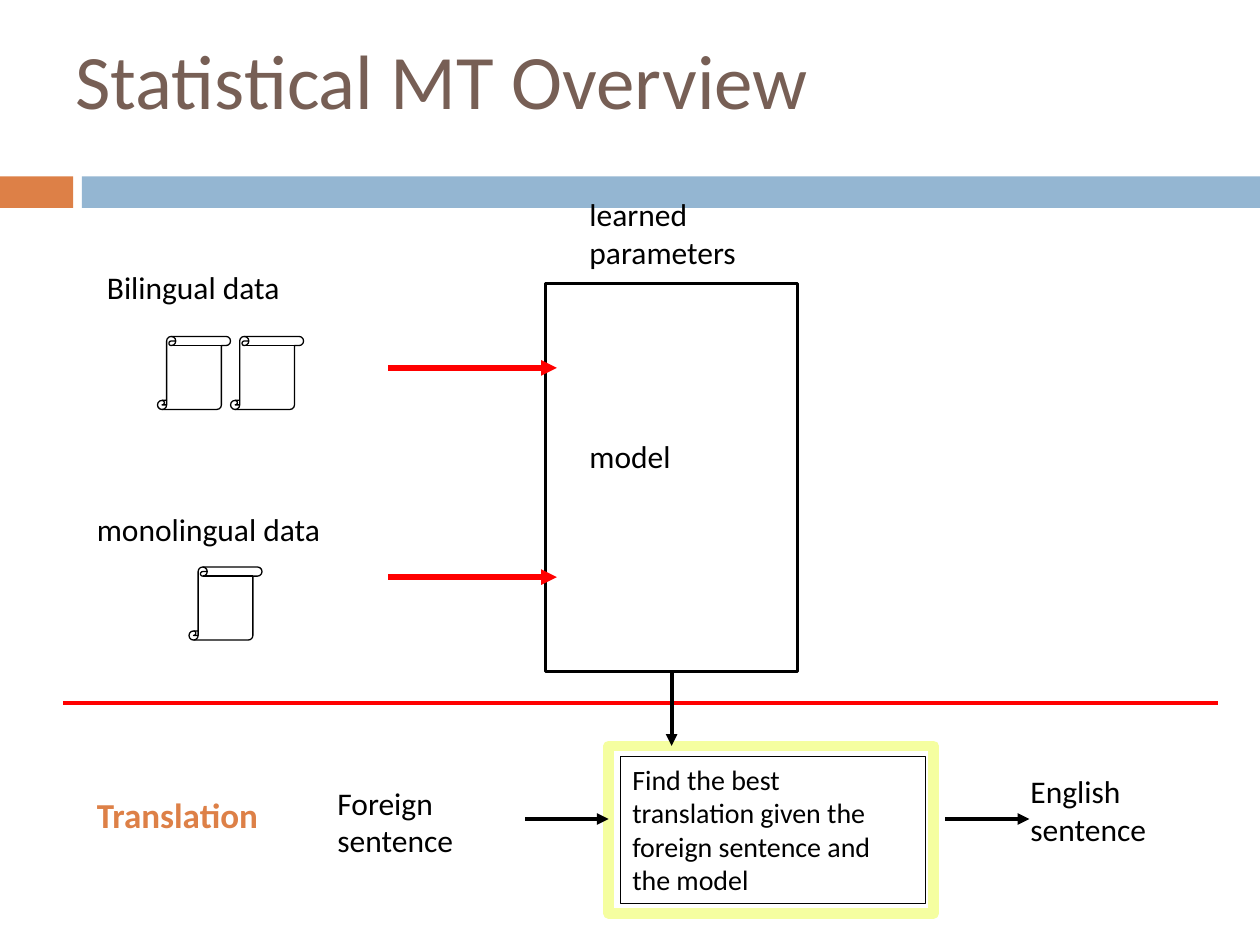
from lxml.etree import SubElement
from pptx import Presentation
from pptx.dml.color import RGBColor
from pptx.enum.shapes import MSO_CONNECTOR, MSO_SHAPE
from pptx.enum.text import MSO_ANCHOR, MSO_AUTO_SIZE, PP_ALIGN
from pptx.oxml.ns import qn
from pptx.util import Inches, Pt

BLACK = RGBColor(0, 0, 0)
RED = RGBColor(0xFF, 0, 0)
ORANGE = RGBColor(0xDD, 0x80, 0x47)
BLUE = RGBColor(0x94, 0xB6, 0xD2)
YELLOW = RGBColor(0xF5, 0xFE, 0xA0)
BROWN = RGBColor(0x77, 0x5F, 0x55)
FONT = "Calibri"

TITLE = "Statistical MT Overview"
BANDS = [((0, 1.4, 0.58, 0.25), ORANGE), ((0.65, 1.4, 9.35, 0.25), BLUE)]
LABELS = [
    ("Bilingual data", (0.75, 2.08, 2.42, 0.4)),
    ("monolingual data", (0.67, 4, 2.42, 0.4)),
    ("learned parameters", (4.58, 1.5, 1.58, 0.7)),
    ("model", (4.58, 3.42, 1.5, 0.4)),
    ("Foreign sentence", (2.58, 6.17, 1.67, 0.7)),
    ("English\vsentence", (8.08, 6.08, 1.67, 0.7)),
]
STAGE = ("Translation", (0.67, 6.25, 1.92, 0.43))
SEARCH = "Find the best\vtranslation given the foreign sentence and the model"
SCROLLS = [(1.25, 2.67), (1.83, 2.67), (1.5, 4.5)]
SCROLL_SIZE = 0.58
DATA_ROWS = [2.92, 4.58]
FLOW_Y = 6.5
FLOWS = [(4.17, 4.83), (7.5, 8.17)]


def add_box(place, line=None, width=1, fill=None, kind=MSO_SHAPE.RECTANGLE):
    box = slide.shapes.add_shape(kind, *map(Inches, place))
    box.shadow.inherit = False
    if fill is None:
        box.fill.background()
    else:
        box.fill.solid()
        box.fill.fore_color.rgb = fill
    if line is None:
        box.line.fill.background()
    else:
        box.line.color.rgb = line
        box.line.width = Pt(width)
    return box


def write(shape, text, size, color=BLACK, bold=None):
    frame = shape.text_frame
    frame.text = text
    frame.word_wrap = True
    para = frame.paragraphs[0]
    para.alignment = PP_ALIGN.LEFT
    for run in para.runs:
        run.font.name = FONT
        run.font.size = Pt(size)
        run.font.color.rgb = color
        run.font.bold = bold


def add_label(text, place, size=18, color=BLACK, bold=None):
    label = slide.shapes.add_textbox(*map(Inches, place))
    write(label, text, size, color, bold)
    label.text_frame.auto_size = MSO_AUTO_SIZE.SHAPE_TO_FIT_TEXT


def add_line(start, end, color=BLACK, width=2.25, arrow=True):
    line = slide.shapes.add_connector(
        MSO_CONNECTOR.STRAIGHT, *map(Inches, start + end))
    line.line.color.rgb = color
    line.line.width = Pt(width)
    if arrow:
        SubElement(line.line._get_or_add_ln(), qn("a:tailEnd"), type="triangle")
    SubElement(line._element.spPr, qn("a:effectLst"))
    return line


deck = Presentation()
deck.slide_width, deck.slide_height = Inches(10), Inches(7.5)
slide = deck.slides.add_slide(deck.slide_layouts[5])

title = slide.shapes.title
title.left, title.top, title.width, title.height = map(Inches, (0.5, 0, 9, 1.25))
write(title, TITLE, 44, BROWN)
title.text_frame.vertical_anchor = MSO_ANCHOR.MIDDLE

for place, color in BANDS:
    add_box(place, fill=color)

# Training: data feeds the model
for left, top in SCROLLS:
    add_box((left, top, SCROLL_SIZE, SCROLL_SIZE), BLACK, 0.75,
            kind=MSO_SHAPE.VERTICAL_SCROLL)
model = add_box((4.33, 2.25, 2, 3.08), BLACK, 1.5)
for y in DATA_ROWS:
    add_line((3.08, y), (4.42, y), RED, 3)
add_line((0.5, 5.58), (9.67, 5.58), RED, arrow=False)

# Translation: the model guides the search
add_box((4.83, 5.92, 2.58, 1.33), YELLOW, 6)
search = add_box((4.92, 6, 2.42, 1.17), BLACK, 0.25)
write(search, SEARCH, 16)
search.text_frame.vertical_anchor = MSO_ANCHOR.TOP
add_line((5.33, 5.33), (5.33, 5.92)).begin_connect(model, 2)
for left, right in FLOWS:
    add_line((left, FLOW_Y), (right, FLOW_Y))

for text, place in LABELS:
    add_label(text, place)
add_label(*STAGE, size=20, color=ORANGE, bold=True)

deck.save("out.pptx")
